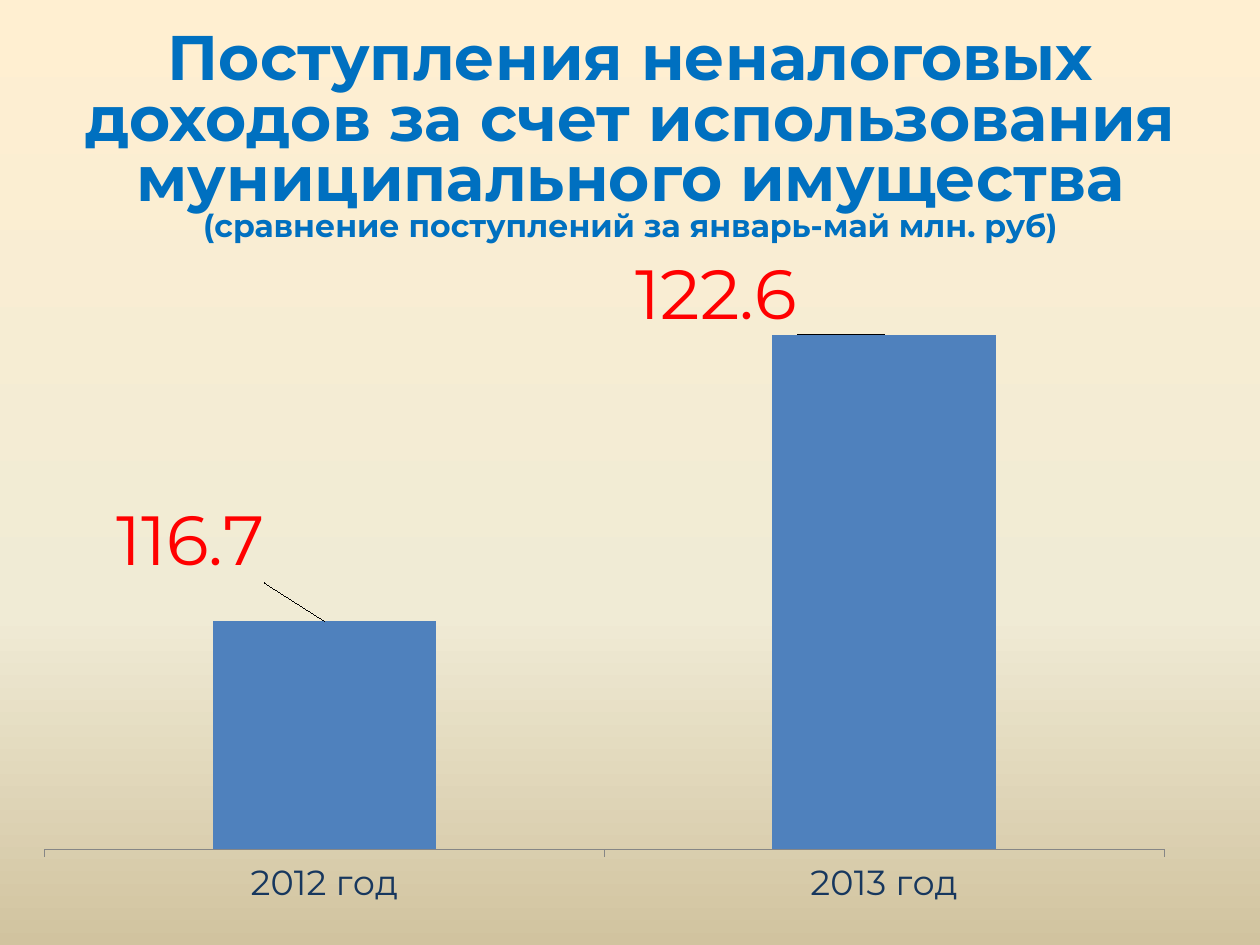
from copy import deepcopy
from lxml.etree import SubElement
from pptx import Presentation
from pptx.chart.data import CategoryChartData as ChartData
from pptx.dml.color import RGBColor
from pptx.enum.chart import XL_CHART_TYPE as ChartType
from pptx.enum.chart import XL_LABEL_POSITION as LabelPos
from pptx.enum.chart import XL_TICK_MARK as Tick
from pptx.enum.text import MSO_ANCHOR as Anchor
from pptx.enum.text import MSO_AUTO_SIZE as AutoSize
from pptx.enum.text import PP_ALIGN as Align
from pptx.oxml.ns import qn
from pptx.util import Pt

EMU_PER_PX = 914400 / 126


def px(*lengths):
    return [round(n * EMU_PER_PX) for n in lengths]


def rgb(code):
    return RGBColor.from_string(code)


def apply(target, values):
    for name, value in values.items():
        setattr(target, name, value)


def add_layout(parent, values):
    layout = SubElement(parent, qn("c:layout"))
    manual = SubElement(layout, qn("c:manualLayout"))
    for name, value in values.items():
        SubElement(manual, qn(f"c:{name}")).set("val", str(value))
    return layout


class Deck:
    face = "Montserrat"
    title_color = "0070C0"
    bar_color = "4F81BD"
    axis_color = "868686"
    category_color = "17375E"
    value_color = "FF0000"

    def __init__(self, width, height):
        self.prs = Presentation()
        self.prs.slide_width, self.prs.slide_height = px(width, height)
        self.s = self.prs.slides.add_slide(self.prs.slide_layouts[5])

    def font(self, font, size, color, bold=False):
        apply(font, {"name": self.face, "size": Pt(size), "bold": bold})
        font.color.rgb = rgb(color)

    def background(self, stops):
        fill = self.s.background.fill
        fill.gradient()
        fill.gradient_angle = 270
        stop_list = self.s._element.xpath(".//a:gsLst")[0]
        while len(stop_list) < len(stops):
            stop_list.append(deepcopy(stop_list[-1]))
        for stop, (position, color) in zip(fill.gradient_stops, stops):
            stop.position = position
            stop.color.rgb = rgb(color)

    def title(self, box, runs):
        sp = self.s.shapes.title
        apply(sp, dict(zip(("left", "top", "width", "height"), px(*box))))
        tf = sp.text_frame
        apply(tf, {"word_wrap": True, "auto_size": AutoSize.SHAPE_TO_FIT_TEXT,
                   "vertical_anchor": Anchor.TOP})
        p = tf.paragraphs[0]
        apply(p, {"alignment": Align.CENTER, "line_spacing": 0.8,
                  "space_before": Pt(0)})
        for text, size in runs:
            r = p.add_run()
            r.text = text
            self.font(r.font, size, self.title_color, True)

    def column_chart(self, box, values, label_offsets):
        data = ChartData()
        data.categories = list(values)
        data.add_series("Series 1", list(values.values()))
        chart = self.s.shapes.add_chart(
            ChartType.COLUMN_CLUSTERED, *px(*box), data).chart
        apply(chart, {"has_legend": False, "has_title": False})
        apply(chart.font, {"name": "Calibri", "size": Pt(18)})
        apply(chart.value_axis, {
            "visible": False, "has_major_gridlines": False,
            "minimum_scale": 112, "maximum_scale": 124.2})
        axis = chart.category_axis
        apply(axis, {"major_tick_mark": Tick.OUTSIDE,
                     "minor_tick_mark": Tick.NONE})
        axis.format.line.color.rgb = rgb(self.axis_color)
        self.font(axis.tick_labels.font, 20, self.category_color)

        plot = chart.plots[0]
        apply(plot, {"gap_width": 150, "vary_by_categories": False})
        area = chart._chartSpace.xpath(".//c:plotArea")[0]
        for old in area.findall(qn("c:layout")):
            area.remove(old)
        area.insert(0, add_layout(area, {
            "layoutTarget": "inner", "xMode": "edge", "yMode": "edge",
            "x": 0, "y": 0, "w": 1, "h": 0.887}))

        series = plot.series[0]
        series.format.fill.solid()
        series.format.fill.fore_color.rgb = rgb(self.bar_color)
        labels = series.data_labels
        apply(labels, {"show_value": True, "position": LabelPos.OUTSIDE_END})
        self.font(labels.font, 40, self.value_color)
        for i, (x, y) in enumerate(label_offsets):
            label = series.points[i].data_label
            self.font(label.font, 40, self.value_color)
            label.position = LabelPos.OUTSIDE_END
            element = series._element.xpath(f".//c:dLbl[c:idx/@val='{i}']")[0]
            element.insert(1, add_layout(element, {"x": x, "y": y}))


def main():
    deck = Deck(1260, 945)
    deck.background([(0, "FFEFD1"), (0.65, "F0EBD5"), (1, "D1C39F")])
    deck.title((35, 26, 1191, 227), [
        ("Поступления неналоговых доходов за счет использования "
         "муниципального имущества ", 36),
        ("(сравнение поступлений за январь-май млн. руб)", 18)])
    deck.column_chart((44, 253, 1121, 672),
                      {"2012 год": 116.7, "2013 год": 122.6},
                      [(-0.12, -0.05), (-0.15, 0.01)])
    deck.prs.save("out.pptx")


if __name__ == "__main__":
    main()
